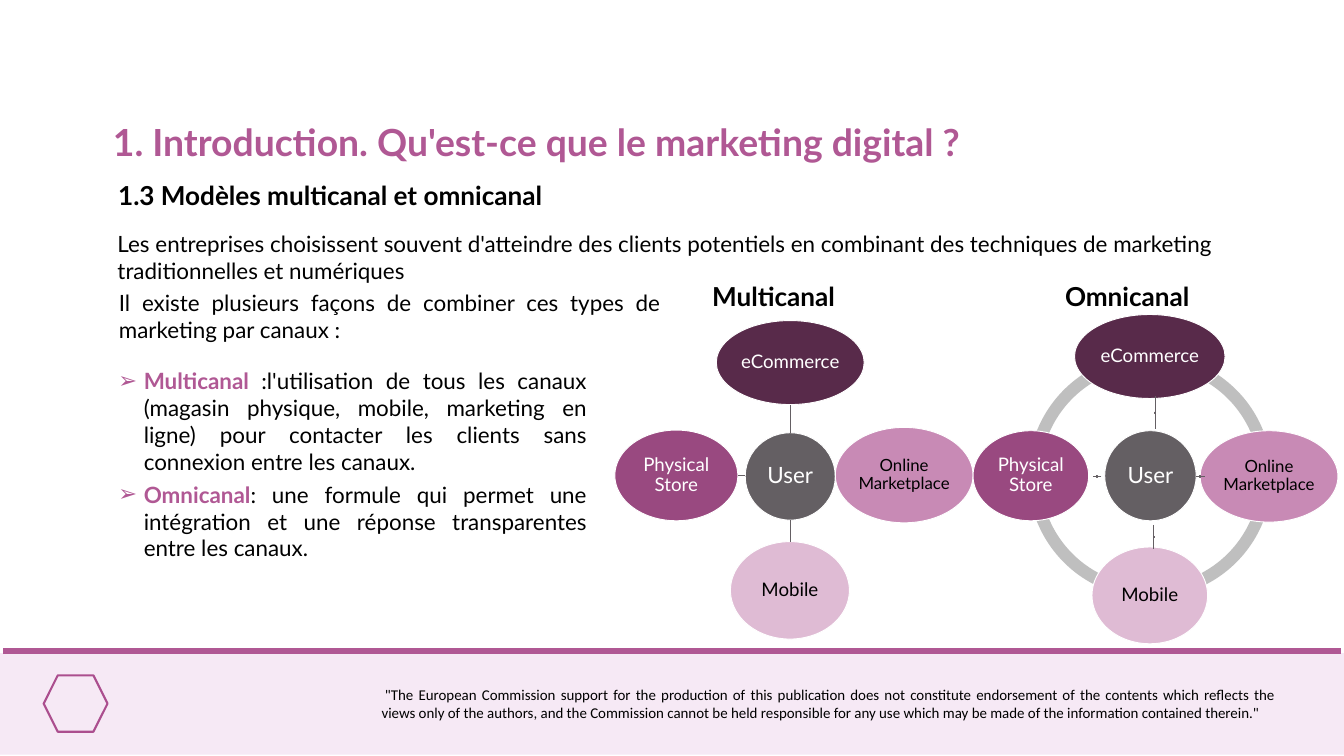
from dataclasses import dataclass

from lxml import etree
from pptx import Presentation
from pptx.dml.color import RGBColor
from pptx.enum.shapes import MSO_CONNECTOR, MSO_SHAPE
from pptx.enum.text import MSO_ANCHOR, MSO_AUTO_SIZE, PP_ALIGN
from pptx.oxml.ns import qn
from pptx.util import Emu, Pt

LEFT, CENTER, JUSTIFY = PP_ALIGN.LEFT, PP_ALIGN.CENTER, PP_ALIGN.JUSTIFY
TOP, MIDDLE = MSO_ANCHOR.TOP, MSO_ANCHOR.MIDDLE
RECTANGLE, ELLIPSE = MSO_SHAPE.RECTANGLE, MSO_SHAPE.OVAL
ARC, HEXAGON = MSO_SHAPE.BLOCK_ARC, MSO_SHAPE.HEXAGON
STRAIGHT, NO_AUTOFIT = MSO_CONNECTOR.STRAIGHT, MSO_AUTO_SIZE.NONE

EMU_PER_PX = 9144  # 100 px to the inch
PINK, BLACK, WHITE, GREY = "B05894", "000000", "FFFFFF", "645F63"
PLUM, MAGENTA, ROSE, BLUSH = "582A4A", "994980", "C88AB5", "DFBBD4"
QUARTER_TURN = 54  # block arc adjustment units


@dataclass
class Box:
    left: int
    top: int
    width: int
    height: int


@dataclass
class Node:
    label: str
    box: Box
    fill: str
    size: int = 20
    color: str = WHITE


@dataclass
class Spoke:
    x1: int
    y1: int
    x2: int
    y2: int


@dataclass
class TextBlock:
    text: str
    box: Box
    size: int = 24
    bold: bool = False
    align: int = LEFT
    font: str = "Lato"
    indent: int = 0


def px(value: float) -> Emu:
    return Emu(round(value * EMU_PER_PX))


def rgb(color: str) -> RGBColor:
    return RGBColor.from_string(color)


def place(shape, box: Box) -> None:
    shape.left, shape.top = px(box.left), px(box.top)
    shape.width, shape.height = px(box.width), px(box.height)


def format_span(span, size: int, color: str, bold: bool = False, font: str = "Lato") -> None:
    span.font.name, span.font.size, span.font.bold = font, Pt(size), bold
    span.font.color.rgb = rgb(color)


def indent_para(para, margin: int, first_line: int):
    properties = para._p.get_or_add_pPr()
    properties.set("marL", str(px(margin)))
    properties.set("indent", str(px(first_line)))
    return properties


def add_shape(page, kind: int, box: Box, fill: str = "", line: str = "", weight: float = 1):
    shape = page.shapes.add_shape(kind, px(box.left), px(box.top), px(box.width), px(box.height))
    shape.shadow.inherit = False
    if fill:
        shape.fill.solid()
        shape.fill.fore_color.rgb = rgb(fill)
    else:
        shape.fill.background()
    if line:
        shape.line.color.rgb = rgb(line)
        shape.line.width = Pt(weight)
    else:
        shape.line.fill.background()
    return shape


def add_line(page, spoke: Spoke, color: str = GREY, weight: float = 1) -> None:
    line = page.shapes.add_connector(STRAIGHT, px(spoke.x1), px(spoke.y1), px(spoke.x2), px(spoke.y2))
    line.line.color.rgb = rgb(color)
    line.line.width = Pt(weight)
    etree.SubElement(line._element.spPr, qn("a:effectLst"))


def add_text(page, block: TextBlock) -> None:
    box = page.shapes.add_textbox(0, 0, 0, 0)
    place(box, block.box)
    frame = box.text_frame
    frame.word_wrap = True
    frame.text = block.text
    para = frame.paragraphs[0]
    para.alignment = block.align
    if block.indent:
        indent_para(para, 0, block.indent)
    format_span(para.runs[0], block.size, BLACK, block.bold, block.font)


def add_node(page, node: Node) -> None:
    shape = add_shape(page, ELLIPSE, node.box, node.fill, WHITE)
    frame = shape.text_frame
    frame.word_wrap, frame.vertical_anchor = True, MIDDLE
    frame.margin_left = frame.margin_right = frame.margin_top = frame.margin_bottom = px(2)
    frame.text = node.label
    para = frame.paragraphs[0]
    para.alignment, para.line_spacing = CENTER, 0.9
    format_span(para.runs[0], node.size, node.color)


def add_dot(page, spoke: Spoke) -> None:
    x, y = (spoke.x1 + spoke.x2) // 2, (spoke.y1 + spoke.y2) // 2
    add_shape(page, RECTANGLE, Box(x - 1, y - 1, 2, 2), GREY, GREY, 0.75)


def add_ring(page, box: Box) -> None:
    for quarter in (2, 1, 0, 3):
        arc = add_shape(page, ARC, box, "BFBFBF")
        arc.adjustments[0] = quarter * QUARTER_TURN
        arc.adjustments[1] = (quarter + 1) % 4 * QUARTER_TURN
        arc.adjustments[2] = 0.05


def channel_nodes(user: Box, shop: Box, market: Box, mobile: Box, store: Box) -> list[Node]:
    return [
        Node("User", user, GREY, 24),
        Node("eCommerce", shop, PLUM),
        Node("Online Marketplace", market, ROSE, 18, BLACK),
        Node("Mobile", mobile, BLUSH, 20, BLACK),
        Node("Physical Store", store, MAGENTA),
    ]


def fill_title(title, text: str) -> None:
    place(title, Box(158, 172, 1358, 77))
    frame = title.text_frame
    frame.text = text
    frame.vertical_anchor, frame.auto_size = TOP, NO_AUTOFIT
    frame.paragraphs[0].alignment = LEFT
    format_span(frame.paragraphs[0].runs[0], 40, PINK, True)


def fill_definitions(body, definitions: list[tuple[str, str]]) -> None:
    place(body, Box(166, 542, 717, 301))
    frame = body.text_frame
    frame.auto_size = NO_AUTOFIT
    for index, (term, meaning) in enumerate(definitions):
        para = frame.add_paragraph() if index else frame.paragraphs[0]
        properties = indent_para(para, 38, -38)
        bullet_color = etree.SubElement(properties, qn("a:buClr"))
        etree.SubElement(bullet_color, qn("a:srgbClr")).set("val", PINK)
        etree.SubElement(properties, qn("a:buChar")).set("char", "➢")
        para.alignment = JUSTIFY
        para.space_before, para.space_after = Pt(0), Pt(6)
        para.text = term
        format_span(para.runs[0], 24, PINK, True)
        span = para.add_run()
        span.text = meaning
        format_span(span, 24, BLACK)


TEXTS = [
    TextBlock("\"The European Commission support for the production of this publication does not constitute "
              "endorsement of the contents which reflects the views only of the authors, and the Commission "
              "cannot be held responsible for any use which may be made of the information contained therein.\"",
              Box(558, 1015, 1350, 64), 16, align=JUSTIFY, font="Calibri", indent=5),
    TextBlock("1.3 Modèles multicanal et omnicanal", Box(166, 262, 1098, 57), 28, True),
    TextBlock("Les entreprises choisissent souvent d'atteindre des clients potentiels en combinant des "
              "techniques de marketing traditionnelles et numériques", Box(165, 338, 1671, 91)),
    TextBlock("Il existe plusieurs façons de combiner ces types de marketing par canaux :",
              Box(167, 425, 825, 91), align=JUSTIFY),
    TextBlock("Multicanal", Box(1050, 412, 249, 57), 28, True),
    TextBlock("Omnicanal", Box(1575, 412, 259, 57), 28, True),
]
DEFINITIONS = [
    ("Multicanal ", ":l'utilisation de tous les canaux (magasin physique, mobile, marketing en ligne) pour "
                    "contacter les clients sans connexion entre les canaux."),
    ("Omnicanal", ": une formule qui permet une intégration et une réponse transparentes entre les canaux."),
]
MULTICHANNEL = channel_nodes(Box(1109, 644, 134, 130), Box(1066, 477, 220, 125), Box(1243, 636, 205, 142),
                             Box(1087, 806, 177, 145), Box(915, 640, 183, 135))
OMNICHANNEL = channel_nodes(Box(1644, 641, 136, 134), Box(1599, 468, 224, 125), Box(1786, 641, 205, 136),
                            Box(1625, 814, 172, 144), Box(1448, 641, 172, 134))
MULTI_SPOKES = [Spoke(1176, 644, 1176, 602), Spoke(1176, 774, 1176, 806), Spoke(1109, 708, 1098, 708)]
OMNI_SPOKES = [Spoke(1719, 638, 1719, 590), Spoke(1780, 709, 1793, 709),
               Spoke(1717, 781, 1717, 817), Spoke(1639, 709, 1626, 709)]


def main() -> None:
    deck = Presentation()
    deck.slide_width, deck.slide_height = px(2000), px(1125)
    page = deck.slides.add_slide(deck.slide_layouts[1])

    # Footer band with a plain emblem
    add_shape(page, RECTANGLE, Box(0, 972, 2000, 151), "F6E9F5")
    add_line(page, Spoke(5, 969, 1995, 969), PINK, 6.75)
    add_shape(page, HEXAGON, Box(65, 1005, 95, 84), line="AB4E8E", weight=2.25)

    # Wording
    fill_title(page.shapes.title, "1. Introduction. Qu'est-ce que le marketing digital ?")
    fill_definitions(page.placeholders[1], DEFINITIONS)
    for block in TEXTS:
        add_text(page, block)

    # Channel diagrams
    add_ring(page, Box(1530, 527, 363, 363))
    for node in MULTICHANNEL + OMNICHANNEL:
        add_node(page, node)
    for spoke in MULTI_SPOKES + OMNI_SPOKES:
        add_line(page, spoke)
    for spoke in OMNI_SPOKES:
        add_dot(page, spoke)

    deck.save("out.pptx")


if __name__ == "__main__":
    main()
